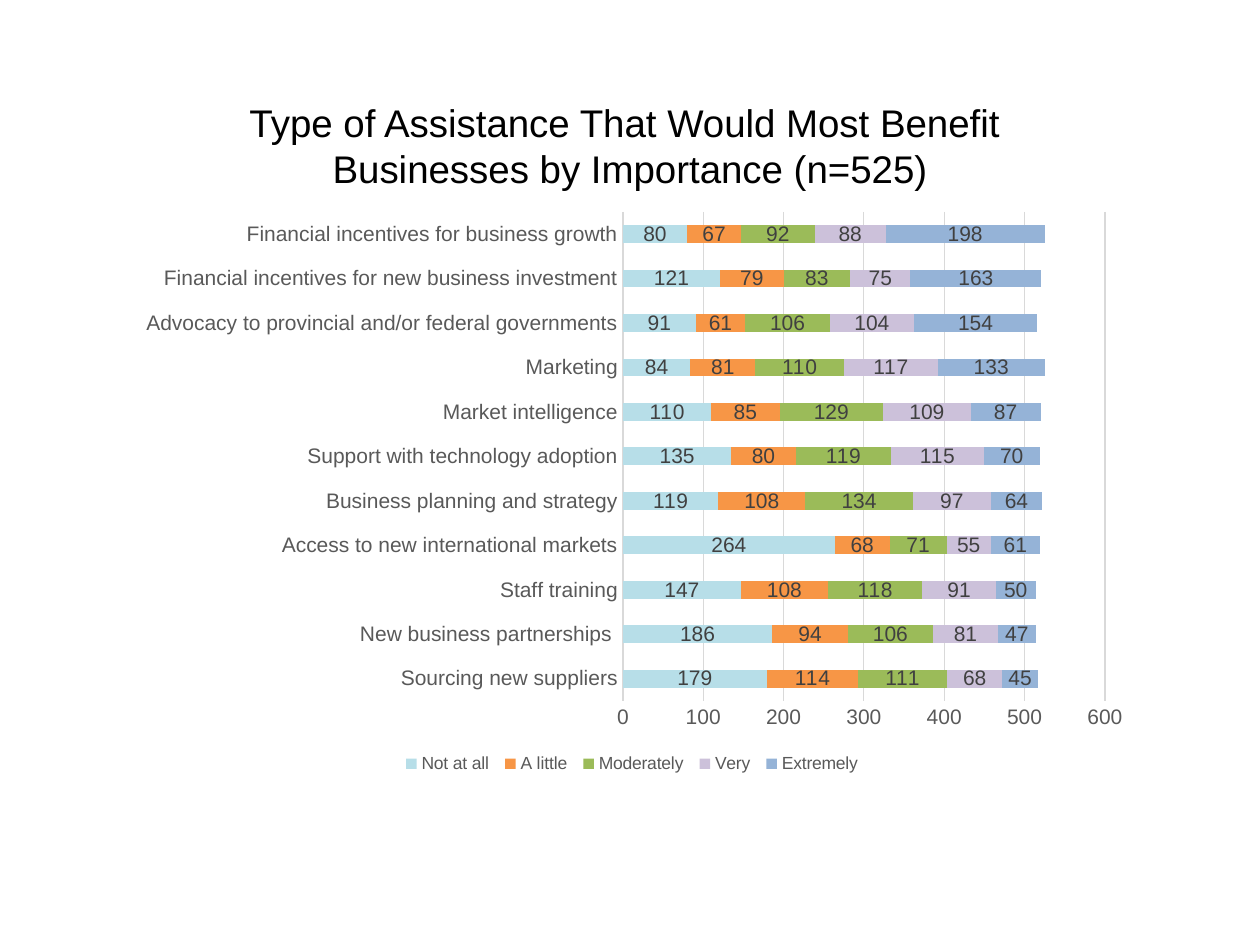
from pptx import Presentation
from pptx.chart.data import CategoryChartData
from pptx.dml.color import RGBColor
from pptx.enum.chart import (XL_CHART_TYPE, XL_LABEL_POSITION,
                             XL_LEGEND_POSITION, XL_TICK_MARK)
from pptx.enum.text import MSO_ANCHOR, PP_ALIGN
from pptx.util import Inches, Pt

BAR = XL_CHART_TYPE.BAR_STACKED
BOTTOM = XL_LEGEND_POSITION.BOTTOM
CENTER = XL_LABEL_POSITION.CENTER
NO_TICK = XL_TICK_MARK.NONE

BLACK = RGBColor(0x00, 0x00, 0x00)
DARK = RGBColor(0x40, 0x40, 0x40)
GREY = RGBColor(0x59, 0x59, 0x59)
LIGHT = RGBColor(0xD9, 0xD9, 0xD9)
BLUE = RGBColor(0xB7, 0xDE, 0xE8)
ORANGE = RGBColor(0xF7, 0x96, 0x46)
GREEN = RGBColor(0x9B, 0xBB, 0x59)
LILAC = RGBColor(0xCC, 0xC1, 0xDA)
STEEL = RGBColor(0x95, 0xB3, 0xD7)

# Answers, from the bottom bar to the top one
LEVELS = [("Not at all ", BLUE), ("A little ", ORANGE), ("Moderately ", GREEN),
          ("Very ", LILAC), ("Extremely ", STEEL)]
ROWS = [
    ("Sourcing new suppliers", 179, 114, 111, 68, 45),
    ("New business partnerships ", 186, 94, 106, 81, 47),
    ("Staff training", 147, 108, 118, 91, 50),
    ("Access to new international markets", 264, 68, 71, 55, 61),
    ("Business planning and strategy", 119, 108, 134, 97, 64),
    ("Support with technology adoption", 135, 80, 119, 115, 70),
    ("Market intelligence", 110, 85, 129, 109, 87),
    ("Marketing", 84, 81, 110, 117, 133),
    ("Advocacy to provincial and/or federal governments", 91, 61, 106, 104, 154),
    ("Financial incentives for new business investment", 121, 79, 83, 75, 163),
    ("Financial incentives for business growth", 80, 67, 92, 88, 198),
]


def style(font, size, color):
    font.name = "Arial"
    font.size = Pt(size)
    font.bold = False
    font.color.rgb = color


prs = Presentation()
prs.slide_width, prs.slide_height = Inches(10), Inches(7.5)
slide = prs.slides.add_slide(prs.slide_layouts[6])

# Title
box = slide.shapes.add_textbox(Inches(1.84), Inches(0.73), Inches(6.32), Inches(0.84))
frame = box.text_frame
frame.word_wrap = False
frame.vertical_anchor = MSO_ANCHOR.MIDDLE
title = frame.paragraphs[0]
title.text = ("Type of Assistance That Would Most Benefit \v"
              "Businesses by Importance (n=525)")
title.alignment = PP_ALIGN.CENTER
style(title.font, 22, BLACK)

# Chart data
data = CategoryChartData()
names, *columns = zip(*ROWS)
data.categories = names
for (level, _), values in zip(LEVELS, columns):
    data.add_series(level, values)

# Stacked bars
chart = slide.shapes.add_chart(BAR, Inches(1), Inches(1.59), Inches(8.07),
                               Inches(4.59), data).chart
chart.has_title = False
style(chart.font, 12, BLACK)
plot = chart.plots[0]
plot.gap_width = 150
plot.overlap = 100
plot.vary_by_categories = False
for series, (_, color) in zip(plot.series, LEVELS):
    series.format.fill.solid()
    series.format.fill.fore_color.rgb = color
    labels = series.data_labels
    labels.show_value = True
    labels.position = CENTER
    style(labels.font, 12, DARK)

# Axes
for axis in (chart.category_axis, chart.value_axis):
    axis.major_tick_mark = axis.minor_tick_mark = NO_TICK
    style(axis.tick_labels.font, 12, GREY)
scale = chart.value_axis
scale.minimum_scale, scale.maximum_scale, scale.major_unit = 0, 600, 100
scale.format.line.fill.background()
for line in (chart.category_axis.format.line, scale.major_gridlines.format.line):
    line.color.rgb = LIGHT
    line.width = Pt(0.75)

# Legend
chart.has_legend = True
chart.legend.position = BOTTOM
chart.legend.include_in_layout = False
style(chart.legend.font, 10, GREY)

prs.save("out.pptx")
